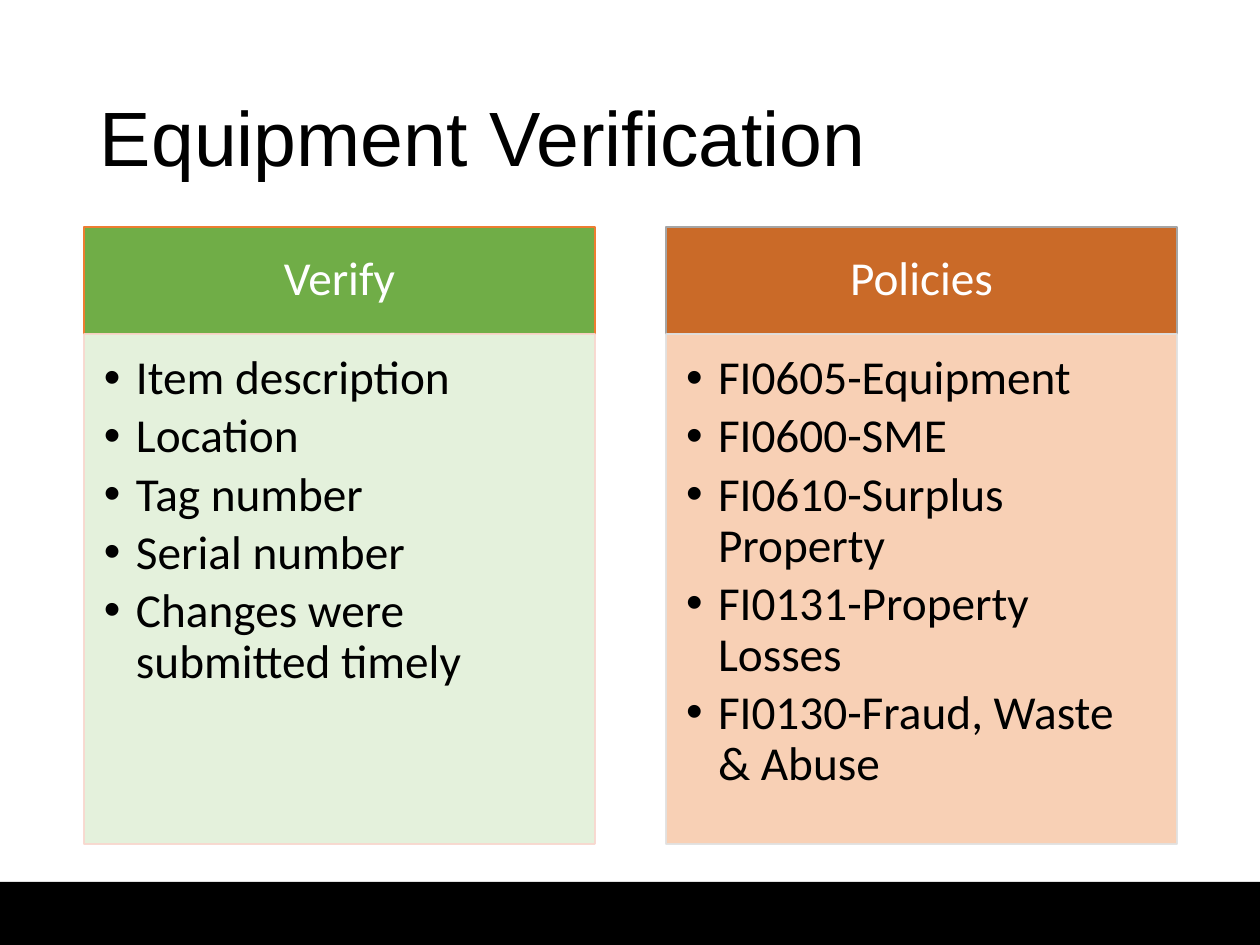
from lxml.etree import SubElement
from pptx import Presentation
from pptx.dml.color import RGBColor
from pptx.enum.shapes import MSO_SHAPE
from pptx.enum.text import MSO_ANCHOR, PP_ALIGN
from pptx.oxml.ns import qn
from pptx.util import Emu, Pt

EMU_PER_PX = 914400 / 126
SLIDE_WIDTH, SLIDE_HEIGHT = 1260, 945
COLUMN_WIDTH, COLUMN_GAP = 511, 71
COLUMN_LEFT = (SLIDE_WIDTH - 2 * COLUMN_WIDTH - COLUMN_GAP) // 2 + 1
HEADER_TOP, HEADER_HEIGHT, LIST_HEIGHT = 227, 107, 510
BULLET_INDENT = 32

COLORS = {
    "black": "000000", "white": "FFFFFF",
    "green": "70AD47", "green_edge": "ED7D31",
    "pale_green": "E2F0D9", "pale_green_edge": "F8D7CE",
    "orange": "C55A11", "orange_edge": "A5A5A5",
    "pale_orange": "F8CBAD", "pale_orange_edge": "E1E1E1",
}

# Heading, header colour, header opacity, list colour, items
COLUMNS = [
    ("Verify", "green", 100, "pale_green",
     ["Item description", "Location", "Tag number", "Serial number",
      "Changes were submitted timely"]),
    ("Policies", "orange", 90, "pale_orange",
     ["FI0605-Equipment", "FI0600-SME", "FI0610-Surplus Property",
      "FI0131-Property Losses", "FI0130-Fraud, Waste & Abuse"]),
]


def px(length):
    return Emu(round(length * EMU_PER_PX))


def rgb(name):
    return RGBColor.from_string(COLORS[name])


def set_opacity(color_format, percent):
    if percent < 100:
        color = color_format._xFill.find(qn("a:solidFill"))[0] \
            if hasattr(color_format, "_xFill") else color_format[0]
        SubElement(color, qn("a:alpha"), val=str(percent * 1000))


def add_panel(slide, box, color, edge=None, opacity=100, edge_opacity=100):
    panel = slide.shapes.add_shape(MSO_SHAPE.RECTANGLE, *map(px, box))
    panel.shadow.inherit = False
    panel.fill.solid()
    panel.fill.fore_color.rgb = rgb(color)
    properties = panel._element.spPr
    set_opacity(properties.find(qn("a:solidFill")), opacity)
    if edge:
        panel.line.color.rgb = rgb(edge)
        panel.line.width = Pt(1)
        outline = properties.find(qn("a:ln"))
        set_opacity(outline.find(qn("a:solidFill")), edge_opacity)
    else:
        panel.line.fill.background()
    return panel


def set_frame(frame, insets, anchor):
    frame.word_wrap = True
    frame.vertical_anchor = anchor
    (frame.margin_left, frame.margin_top,
     frame.margin_right, frame.margin_bottom) = map(px, insets)


def add_bullet(paragraph):
    properties = paragraph._p.get_or_add_pPr()
    properties.set("marL", str(px(BULLET_INDENT)))
    properties.set("indent", str(-px(BULLET_INDENT)))
    SubElement(properties, qn("a:buFont"), typeface="Arial")
    SubElement(properties, qn("a:buChar"), char="•")


def write_line(paragraph, text, size, color, font, align=PP_ALIGN.LEFT):
    paragraph.alignment = align
    paragraph.line_spacing = 0.9
    run = paragraph.add_run()
    run.text = text
    run.font.size = Pt(size)
    run.font.name = font
    run.font.color.rgb = rgb(color)


def add_title(slide, text):
    frame = slide.shapes.add_textbox(*map(px, (87, 50, 1086, 183))).text_frame
    set_frame(frame, (13, 6, 13, 6), MSO_ANCHOR.MIDDLE)
    write_line(frame.paragraphs[0], text, 44, "black", "Arial")


def add_column(slide, left, heading, color, opacity, list_color, items):
    # Header
    header = add_panel(slide, (left, HEADER_TOP, COLUMN_WIDTH, HEADER_HEIGHT),
                       color, color + "_edge", opacity)
    set_frame(header.text_frame, (26, 15, 26, 15), MSO_ANCHOR.MIDDLE)
    write_line(header.text_frame.paragraphs[0], heading, 27, "white",
               "Calibri", PP_ALIGN.CENTER)

    # Bulleted list
    list_box = (left, HEADER_TOP + HEADER_HEIGHT, COLUMN_WIDTH, LIST_HEIGHT)
    frame = add_panel(slide, list_box, list_color, list_color + "_edge",
                      90, 90).text_frame
    set_frame(frame, (20, 20, 26, 30), MSO_ANCHOR.TOP)
    for index, item in enumerate(items):
        paragraph = frame.add_paragraph() if index else frame.paragraphs[0]
        paragraph.level = 1
        add_bullet(paragraph)
        paragraph.space_after = Pt(4)
        write_line(paragraph, item, 27, "black", "Calibri")


def main():
    presentation = Presentation()
    presentation.slide_width = px(SLIDE_WIDTH)
    presentation.slide_height = px(SLIDE_HEIGHT)
    slide = presentation.slides.add_slide(presentation.slide_layouts[6])

    # Footer band and title
    add_panel(slide, (0, 882, SLIDE_WIDTH, 63), "black")
    add_title(slide, "Equipment Verification")

    # Two columns
    for index, column in enumerate(COLUMNS):
        left = COLUMN_LEFT + index * (COLUMN_WIDTH + COLUMN_GAP)
        add_column(slide, left, *column)

    presentation.save("out.pptx")


if __name__ == "__main__":
    main()
